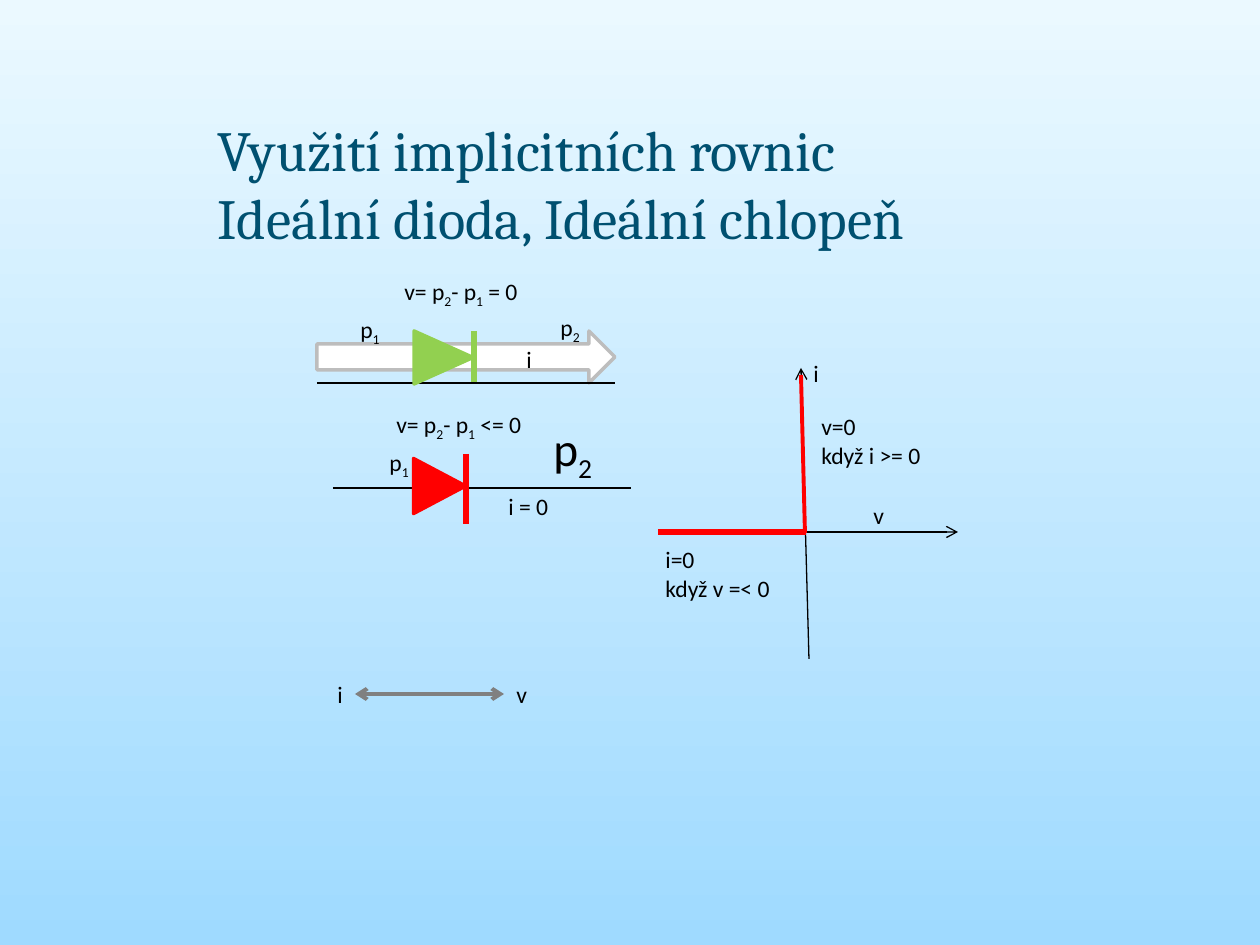
from lxml.etree import SubElement
from pptx import Presentation
from pptx.dml.color import RGBColor
from pptx.enum.shapes import MSO_CONNECTOR, MSO_SHAPE
from pptx.enum.text import MSO_ANCHOR, MSO_AUTO_SIZE
from pptx.oxml.ns import qn
from pptx.util import Pt

PX = 914400 / 126

SKY_TOP = RGBColor(0xEB, 0xF9, 0xFF)
SKY_BOTTOM = RGBColor(0x9F, 0xDA, 0xFF)
TITLE_BLUE = RGBColor(0x00, 0x50, 0x70)
BLACK = RGBColor(0x00, 0x00, 0x00)
WHITE = RGBColor(0xFF, 0xFF, 0xFF)
SILVER = RGBColor(0xBD, 0xBD, 0xBD)
GRAY = RGBColor(0x80, 0x80, 0x80)
GREEN = RGBColor(0x92, 0xD0, 0x50)
RED = RGBColor(0xFF, 0x00, 0x00)


def px(*lengths):
    return [round(length * PX) for length in lengths]


def add_run(paragraph, text, size, font, color, subscript=False):
    run = paragraph.add_run()
    run.text = text
    run.font.size = Pt(size)
    run.font.name = font
    run.font.color.rgb = color
    if subscript:
        run.font._element.set("baseline", "-25000")


def add_text(shapes, text, box, size=13.5, font="Calibri", color=BLACK,
             wrap=False, anchor=MSO_ANCHOR.TOP, fit=MSO_AUTO_SIZE.SHAPE_TO_FIT_TEXT):
    """Write text; _ lowers the next character, \\v breaks a line, \\n a paragraph."""
    frame = shapes.add_textbox(*px(*box)).text_frame
    frame.word_wrap = wrap
    frame.vertical_anchor = anchor
    frame.auto_size = fit
    for i, paragraph_text in enumerate(text.split("\n")):
        paragraph = frame.add_paragraph() if i else frame.paragraphs[0]
        for j, line in enumerate(paragraph_text.split("\v")):
            if j:
                paragraph.add_line_break()
            plain, *lowered = line.split("_")
            add_run(paragraph, plain, size, font, color)
            for part in lowered:
                add_run(paragraph, part[0], size, font, color, subscript=True)
                if part[1:]:
                    add_run(paragraph, part[1:], size, font, color)


def add_line(shapes, ends, color=BLACK, width=0.75, head=False, tail=False):
    connector = shapes.add_connector(MSO_CONNECTOR.STRAIGHT, *px(*ends))
    connector.line.color.rgb = color
    connector.line.width = Pt(width)
    outline = connector.line._get_or_add_ln()
    for tag, wanted in (("a:headEnd", head), ("a:tailEnd", tail)):
        if wanted:
            SubElement(outline, qn(tag), type="arrow")
    SubElement(connector._element.spPr, qn("a:effectLst"))


def add_preset(shapes, preset, box, fill, outline, rotation=0):
    shape = shapes.add_shape(preset, *px(*box))
    shape.shadow.inherit = False
    shape.fill.solid()
    shape.fill.fore_color.rgb = fill
    shape.line.color.rgb = outline
    shape.line.width = Pt(2)
    shape.rotation = rotation


def add_diode(shapes, color, wire, bar, triangle, labels):
    add_line(shapes, wire)
    add_line(shapes, bar, color, 3)
    add_preset(shapes, MSO_SHAPE.ISOSCELES_TRIANGLE, triangle, color, color, 90)
    for text, box, size in labels:
        add_text(shapes, text, box, size)


def add_characteristic(shapes):
    # Axes
    add_line(shapes, (801, 368, 809, 659), head=True)
    add_line(shapes, (660, 532, 958, 532), tail=True)
    # Closed and open branches
    add_line(shapes, (658, 532, 806, 532), RED, 3)
    add_line(shapes, (805, 533, 801, 375), RED, 2.25)
    for text, box in (
        ("i", (801, 353, 52, 42)),
        ("v", (861, 495, 52, 42)),
        ("i=0\nkdyž v =< 0", (653, 539, 156, 71)),
        ("v=0\nkdyž i >= 0", (809, 406, 156, 71)),
    ):
        add_text(shapes, text, box, wrap=True)


def main():
    deck = Presentation()
    deck.slide_width, deck.slide_height = px(1260, 945)
    slide = deck.slides.add_slide(deck.slide_layouts[6])
    shapes = slide.shapes

    # Background
    sky = slide.background.fill
    sky.gradient()
    sky.gradient_angle = 270
    for stop, color in zip(sky.gradient_stops, (SKY_TOP, SKY_BOTTOM)):
        stop.color.rgb = color

    # Title
    add_text(shapes, "Využití implicitních rovnic \vIdeální dioda, Ideální chlopeň",
             (205, 130, 849, 105), 32.4, "Cambria", TITLE_BLUE, wrap=True,
             anchor=MSO_ANCHOR.MIDDLE, fit=MSO_AUTO_SIZE.NONE)

    # Conducting diode, with the flow behind it
    add_preset(shapes, MSO_SHAPE.RIGHT_ARROW, (317, 331, 298, 52), WHITE, SILVER)
    add_diode(shapes, GREEN, wire=(317, 383, 615, 383), bar=(474, 331, 474, 382),
              triangle=(417, 328, 53, 59), labels=(
                  ("p_1", (348, 309, 45, 42), 13.5),
                  ("p_2", (548, 307, 45, 42), 13.5),
                  ("i", (514, 339, 32, 42), 13.5),
                  ("v= p_2- p_1 = 0", (392, 271, 142, 42), 13.5)))

    # Current against voltage
    add_characteristic(shapes)

    # Exchange of i and v
    add_text(shapes, "i", (325, 674, 32, 42))
    add_text(shapes, "v", (504, 674, 37, 42))
    add_line(shapes, (504, 694, 355, 694), GRAY, 2.25, head=True, tail=True)

    # Blocking diode
    blocking = shapes.add_group_shape().shapes
    add_diode(blocking, RED, wire=(333, 488, 631, 488), bar=(466, 454, 466, 524),
              triangle=(412, 460, 55, 52), labels=(
                  ("p_1", (377, 442, 45, 42), 13.5),
                  ("p_2", (541, 413, 67, 71), 27),
                  ("i = 0", (496, 486, 66, 42), 13.5),
                  ("v= p_2- p_1 <= 0", (384, 404, 154, 42), 13.5)))

    deck.save("out.pptx")


if __name__ == "__main__":
    main()
